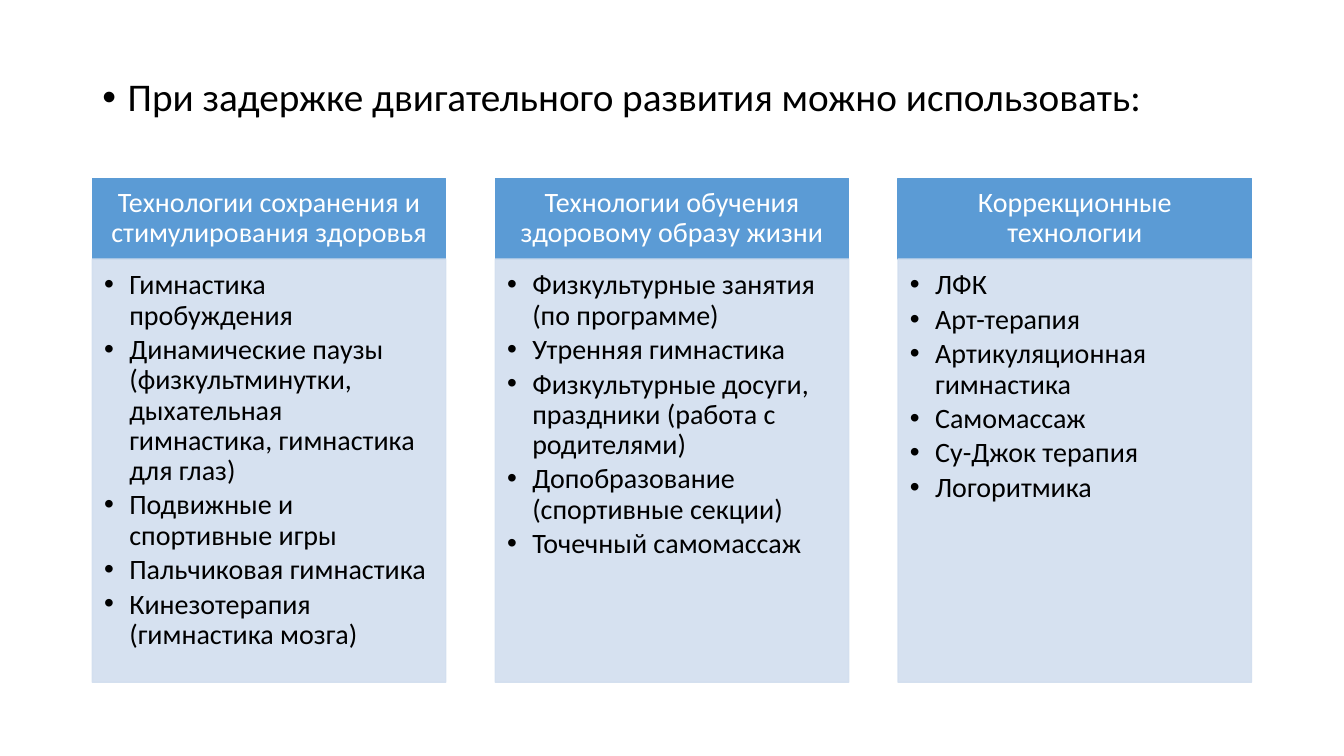
from lxml.etree import SubElement
from pptx import Presentation
from pptx.dml.color import RGBColor
from pptx.enum.shapes import MSO_SHAPE
from pptx.enum.text import MSO_ANCHOR, PP_ALIGN
from pptx.oxml.ns import qn
from pptx.util import Pt

# Content
LEAD = "При задержке двигательного развития можно использовать:"
GROUPS = [
    ("Технологии сохранения и стимулирования здоровья", [
        "Гимнастика пробуждения",
        "Динамические паузы (физкультминутки, дыхательная гимнастика, "
        "гимнастика для глаз)",
        "Подвижные и спортивные игры",
        "Пальчиковая гимнастика",
        "Кинезотерапия (гимнастика мозга)",
    ]),
    ("Технологии обучения здоровому образу жизни", [
        "Физкультурные занятия (по программе)",
        "Утренняя гимнастика",
        "Физкультурные досуги, праздники (работа с родителями)",
        "Допобразование (спортивные секции)",
        "Точечный самомассаж",
    ]),
    ("Коррекционные технологии", [
        "ЛФК",
        "Арт-терапия",
        "Артикуляционная гимнастика",
        "Самомассаж",
        "Су-Джок терапия",
        "Логоритмика",
    ]),
]

# Colours and measures in points
BLUE = RGBColor(0x5B, 0x9B, 0xD5)
PALE = RGBColor(0xD2, 0xDE, 0xEF)
WHITE = RGBColor(0xFF, 0xFF, 0xFF)
BLACK = RGBColor(0, 0, 0)
LEFT, WIDTH = 66, 828
HEAD_TOP, HEAD_H, LIST_H = 127.4, 57.6, 302.4
GAP_RATIO = 0.14  # gap as a share of column width
COUNT = len(GROUPS)
COL_W = WIDTH / (COUNT + GAP_RATIO * (COUNT - 1))
STEP = COL_W * (1 + GAP_RATIO)


def style(para, size, color, bullet=False):
    """Set spacing, bullet and font of one paragraph."""
    para.line_spacing = 0.9
    para.space_before = Pt(0)
    if bullet:
        props = para._p.get_or_add_pPr()
        props.set("marL", str(Pt(18)))
        props.set("indent", str(Pt(-18)))
        SubElement(props, qn("a:buFont"), typeface="Arial")
        SubElement(props, qn("a:buChar"), char="•")
    para.font.size = Pt(size)
    para.font.name = "Calibri"
    para.font.color.rgb = color


def add_box(left, top, height, color, insets):
    """Draw one column part and return it with its text frame."""
    box = slide.shapes.add_shape(
        MSO_SHAPE.RECTANGLE, Pt(left), Pt(top), Pt(COL_W), Pt(height))
    box.shadow.inherit = False
    box.fill.solid()
    box.fill.fore_color.rgb = color
    box.line.color.rgb = color
    box.line.width = Pt(1)
    frame = box.text_frame
    frame.word_wrap = True
    (frame.margin_left, frame.margin_top,
     frame.margin_right, frame.margin_bottom) = map(Pt, insets)
    return box, frame


deck = Presentation()
deck.slide_width, deck.slide_height = Pt(960), Pt(540)
slide = deck.slides.add_slide(deck.slide_layouts[1])

# Lead line in the body placeholder; the title is not used
title = slide.shapes.title
title.element.getparent().remove(title.element)
body = slide.placeholders[1]
body.left, body.top, body.width, body.height = map(Pt, (LEFT, 52, WIDTH, 435))
body.text_frame.text = LEAD
style(body.text_frame.paragraphs[0], 28, BLACK, bullet=True)

# Columns
for col, (head, items) in enumerate(GROUPS):
    left = LEFT + col * STEP

    # Header
    box, frame = add_box(left, HEAD_TOP, HEAD_H, BLUE, (11.2, 6.4, 11.2, 6.4))
    frame.vertical_anchor = MSO_ANCHOR.MIDDLE
    frame.text = head
    para = frame.paragraphs[0]
    para.alignment = PP_ALIGN.CENTER
    style(para, 20, WHITE)

    # List
    box, frame = add_box(
        left, HEAD_TOP + HEAD_H, LIST_H, PALE, (8.4, 8.4, 11.2, 12.6))
    for tint in box.element.spPr.iter(qn("a:srgbClr")):
        SubElement(tint, qn("a:alpha"), val="90000")
    frame.vertical_anchor = MSO_ANCHOR.TOP
    frame.text = "\n".join(items)
    for para in frame.paragraphs:
        para.alignment = PP_ALIGN.LEFT
        para.space_after = Pt(3)
        style(para, 20, BLACK, bullet=True)

deck.save("out.pptx")
